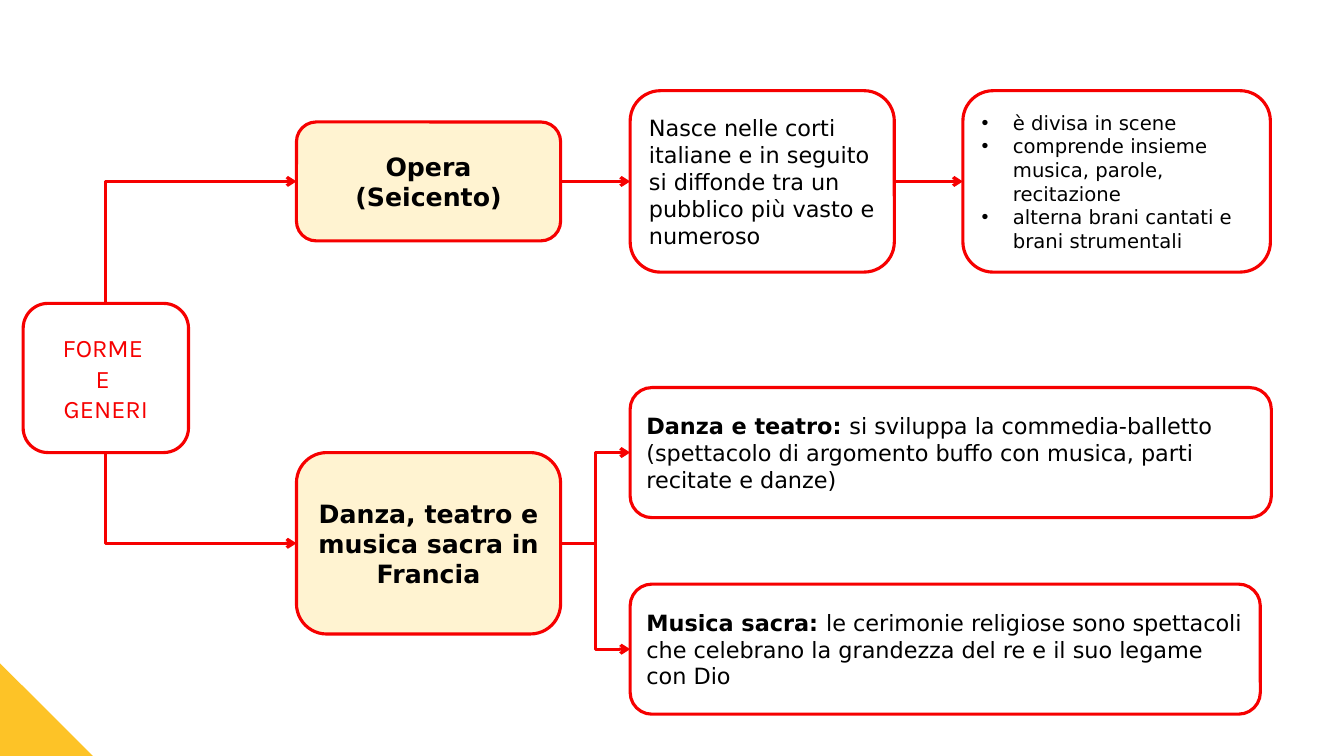
from lxml.etree import SubElement
from pptx import Presentation
from pptx.dml.color import RGBColor
from pptx.enum.shapes import MSO_CONNECTOR, MSO_SHAPE
from pptx.enum.text import MSO_ANCHOR, PP_ALIGN
from pptx.oxml.ns import qn
from pptx.util import Inches, Pt

WIDTH, HEIGHT = 13.33, 7.5
RED, CREAM, YELLOW, BLACK = "F60000", "FFF3D1", "FDC327", "000000"
TOP, LEFT, BOTTOM, RIGHT = range(4)
COLUMNS = {
    "root": (0.23, 1.64),
    "genre": (2.94, 2.62),
    "origin": (6.25, 2.62),
    "traits": (9.55, 3.05),
    "theatre": (6.25, 6.36),
    "sacred": (6.25, 6.25),
}
ROWS = {
    "root": (3.75, 1.48),
    "opera": (1.8, 1.18),
    "opera_detail": (1.8, 1.8),
    "dance": (5.39, 1.8),
    "theatre": (4.49, 1.29),
    "sacred": (6.44, 1.29),
}
ROOT_FONT = {"name": "Karla", "size": Pt(18)}
GENRE_FONT = {"name": "DejaVu Sans", "size": Pt(18), "bold": True}
DETAIL_FONT = {"name": "DejaVu Sans", "size": Pt(16)}
TRAITS_FONT = {"name": "DejaVu Sans", "size": Pt(14)}


def colour(target, value):
    target.rgb = RGBColor.from_string(value)


def cell(column, row):
    left, width = COLUMNS[column]
    middle, height = ROWS[row]
    return left, middle - height / 2, width, height


def add_bullet(paragraph):
    properties = paragraph._p.get_or_add_pPr()
    properties.set("marL", str(Inches(0.31)))
    properties.set("indent", str(-Inches(0.31)))
    SubElement(properties, qn("a:buFont"), typeface="Arial")
    SubElement(properties, qn("a:buChar"), char="•")


def add_node(slide, box, paragraphs, font, ink=BLACK, fill=None,
             align=PP_ALIGN.LEFT, bullets=False):
    node = slide.shapes.add_shape(MSO_SHAPE.ROUNDED_RECTANGLE, *map(Inches, box))
    node.shadow.inherit = False
    if fill:
        node.fill.solid()
        colour(node.fill.fore_color, fill)
    else:
        node.fill.background()
    colour(node.line.color, RED)
    node.line.width = Pt(2.25)
    frame = node.text_frame
    frame.word_wrap = True
    frame.vertical_anchor = MSO_ANCHOR.MIDDLE
    for index, pieces in enumerate(paragraphs):
        paragraph = frame.add_paragraph() if index else frame.paragraphs[0]
        paragraph.alignment = align
        if bullets:
            add_bullet(paragraph)
        for text, extra in pieces:
            run = paragraph.add_run()
            run.text = text
            for attribute, value in {**font, **extra}.items():
                setattr(run.font, attribute, value)
            colour(run.font.color, ink)
    return node


def plain(*lines):
    return [[(line, {})] for line in lines]


def add_arrow(slide, start, start_side, end, kind=MSO_CONNECTOR.STRAIGHT):
    arrow = slide.shapes.add_connector(kind, 0, 0, 0, 0)
    arrow.begin_connect(start, start_side)
    arrow.end_connect(end, LEFT)
    colour(arrow.line.color, RED)
    arrow.line.width = Pt(2.25)
    SubElement(arrow.line._get_or_add_ln(), qn("a:tailEnd"), type="arrow")
    SubElement(arrow._element.spPr, qn("a:effectLst"))
    return arrow


def add_corner_arrow(slide, start, start_side, end):
    arrow = add_arrow(slide, start, start_side, end, MSO_CONNECTOR.ELBOW)
    across, down = arrow.width, arrow.height
    arrow.left += (across - down) // 2
    arrow.top += (down - across) // 2
    arrow.width, arrow.height = down, across
    properties = arrow._element.spPr
    properties.find(qn("a:prstGeom")).set("prst", "bentConnector2")
    transform = properties.find(qn("a:xfrm"))
    transform.set("rot", str((90 if start_side == TOP else 270) * 60000))
    transform.set("flipH", "1")


def add_corner_triangle(slide, side):
    triangle = slide.shapes.add_shape(
        MSO_SHAPE.RIGHT_TRIANGLE, 0, Inches(HEIGHT - side), Inches(side), Inches(side))
    triangle.shadow.inherit = False
    triangle.fill.solid()
    colour(triangle.fill.fore_color, YELLOW)
    triangle.line.fill.background()


def add_genre(slide, row, *lines):
    return add_node(slide, cell("genre", row), plain(*lines), GENRE_FONT,
                    fill=CREAM, align=PP_ALIGN.CENTER)


def add_opera_branch(slide, root):
    opera = add_genre(slide, "opera", "Opera", "(Seicento)")
    origin = add_node(slide, cell("origin", "opera_detail"), plain(
        "Nasce nelle corti italiane e in seguito si diffonde tra un pubblico "
        "più vasto e numeroso"), DETAIL_FONT)
    traits = add_node(slide, cell("traits", "opera_detail"), plain(
        "è divisa in scene",
        "comprende insieme musica, parole, recitazione",
        "alterna brani cantati e brani strumentali"), TRAITS_FONT, bullets=True)
    add_corner_arrow(slide, root, TOP, opera)
    add_arrow(slide, opera, RIGHT, origin)
    add_arrow(slide, origin, RIGHT, traits)


def add_dance_branch(slide, root):
    dance = add_genre(slide, "dance", "Danza, teatro e musica sacra in Francia")
    add_corner_arrow(slide, root, BOTTOM, dance)
    details = {
        "theatre": ("Danza e teatro: ",
                    "si sviluppa la commedia-balletto (spettacolo di argomento "
                    "buffo con musica, parti recitate e danze)"),
        "sacred": ("Musica sacra: ",
                   "le cerimonie religiose sono spettacoli che celebrano la "
                   "grandezza del re e il suo legame con Dio"),
    }
    for place, (heading, text) in details.items():
        detail = add_node(slide, cell(place, place),
                          [[(heading, {"bold": True}), (text, {})]], DETAIL_FONT)
        add_arrow(slide, dance, RIGHT, detail, MSO_CONNECTOR.ELBOW)


def main():
    presentation = Presentation()
    presentation.slide_width = Inches(WIDTH)
    presentation.slide_height = Inches(HEIGHT)
    slide = presentation.slides.add_slide(presentation.slide_layouts[6])
    add_corner_triangle(slide, 0.92)
    root = add_node(slide, cell("root", "root"), plain("FORME ", "E ", "GENERI"),
                    ROOT_FONT, ink=RED, align=PP_ALIGN.CENTER)
    add_opera_branch(slide, root)
    add_dance_branch(slide, root)
    presentation.save("out.pptx")


if __name__ == "__main__":
    main()
